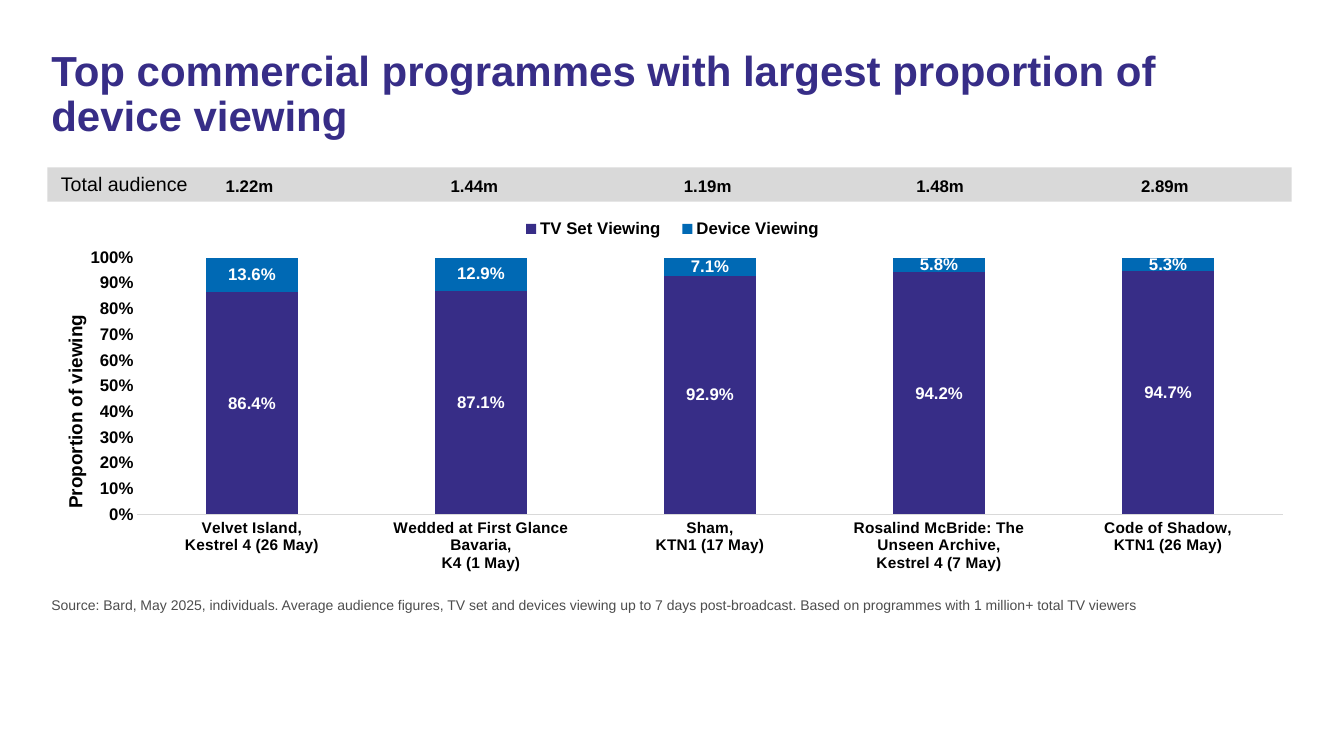
from typing import Any, NamedTuple

from lxml.etree import SubElement as Sub
from pptx import Presentation
from pptx.chart.data import CategoryChartData as Data
from pptx.dml.color import RGBColor
from pptx.enum.chart import XL_CHART_TYPE as Kind
from pptx.enum.chart import XL_LEGEND_POSITION as Side
from pptx.enum.chart import XL_TICK_MARK as Tick
from pptx.enum.shapes import MSO_SHAPE as Form
from pptx.enum.text import MSO_ANCHOR as Anchor
from pptx.enum.text import PP_ALIGN as Align
from pptx.oxml.ns import qn
from pptx.util import Inches, Pt

WIDE, HIGH = Inches(13.33), Inches(7.5)
NAVY, BLUE, GREY, DARK = "372D87", "0069B4", "D9D9D9", "4D4D4D"
BLACK, WHITE = "000000", "FFFFFF"


class Box(NamedTuple):
    left: float
    top: float
    width: float
    height: float

    def place(self) -> tuple[int, int, int, int]:
        col, row = WIDE / 100, HIGH / 100
        return (int(self.left * col), int(self.top * row),
                int(self.width * col), int(self.height * row))


class Note(NamedTuple):
    text: str
    box: Box
    size: float
    hue: str = BLACK
    bold: bool = False
    align: Any = Align.LEFT
    anchor: Any = Anchor.TOP
    line: float = 1.0


class Show(NamedTuple):
    name: str
    total: str
    mid: float
    share: float


class Part(NamedTuple):
    name: str
    hue: str
    vals: list[float]


SHOWS = [
    Show("Velvet Island,\nKestrel 4 (26 May)", "1.22m", 18.57, 0.864),
    Show("Wedded at First Glance Bavaria,\nK4 (1 May)", "1.44m", 35.3, 0.871),
    Show("Sham,\nKTN1 (17 May)", "1.19m", 52.66, 0.929),
    Show("Rosalind McBride: The Unseen Archive,\nKestrel 4 (7 May)",
         "1.48m", 69.95, 0.942),
    Show("Code of Shadow,\nKTN1 (26 May)", "2.89m", 86.68, 0.947),
]
PARTS = [
    Part("TV Set Viewing", NAVY, [s.share for s in SHOWS]),
    Part("Device Viewing", BLUE, [round(1 - s.share, 3) for s in SHOWS]),
]
BAND = Box(3.53, 22.13, 92.57, 4.53)
GRAPH = Box(3.53, 18.13, 93.02, 64)
CELL = 7.13
NOTES = [
    Note("Top commercial programmes with largest proportion of device viewing",
         Box(3.08, 5.2, 93.02, 14.93), 30, NAVY, True,
         anchor=Anchor.MIDDLE, line=0.9),
    Note("Total audience", Box(1.2, 22.13, 13.5, 4.53), 14, align=Align.RIGHT),
    Note("Source: Bard, May 2025, individuals. Average audience figures, "
         "TV set and devices viewing up to 7 days post-broadcast. "
         "Based on programmes with 1 million+ total TV viewers",
         Box(3.08, 78.27, 93.02, 4.4), 10, DARK),
] + [
    Note(s.total, Box(s.mid - CELL / 2, 22.53, CELL, 4), 12, bold=True,
         align=Align.CENTER)
    for s in SHOWS
]


def tint(hue: str) -> RGBColor:
    return RGBColor.from_string(hue)


def apply(item: Any, **form: Any) -> None:
    for key, val in form.items():
        setattr(item, key, val)


def style(font: Any, size: float, hue: str = BLACK, bold: bool = True) -> None:
    apply(font, name="Arial", size=Pt(size), bold=bold)
    font.color.rgb = tint(hue)


def paint(fill: Any, hue: str) -> None:
    fill.solid()
    fill.fore_color.rgb = tint(hue)


def write(slide: Any, note: Note) -> None:
    frame = slide.shapes.add_textbox(*note.box.place()).text_frame
    apply(frame, word_wrap=True, vertical_anchor=note.anchor)
    para = frame.paragraphs[0]
    apply(para, text=note.text, alignment=note.align, line_spacing=note.line)
    style(para.runs[0].font, note.size, note.hue, note.bold)


def pin(node: Any, after: str, **spots: Any) -> None:
    for old in node.findall(qn("c:layout")):
        node.remove(old)
    lay = Sub(node, qn("c:layout"))
    hold = Sub(lay, qn("c:manualLayout"))
    for tag, val in spots.items():
        Sub(hold, qn("c:" + tag)).set("val", str(val))
    prior = node.find(qn(after)) if after else None
    if prior is None:
        node.insert(0, lay)
    else:
        prior.addnext(lay)


def plot(slide: Any) -> None:
    data = Data(number_format="0.0%")
    data.categories = [s.name for s in SHOWS]
    for part in PARTS:
        data.add_series(part.name, part.vals)
    chart = slide.shapes.add_chart(
        Kind.COLUMN_STACKED_100, *GRAPH.place(), data).chart
    style(chart.font, 10, bold=False)
    apply(chart, has_title=False, has_legend=True)
    edge = {"xMode": "edge", "yMode": "edge"}

    key = chart.legend
    apply(key, position=Side.BOTTOM, include_in_layout=False)
    style(key.font, 12)
    pin(key._element, "c:legendPos", **edge, x=0.37, y=0.16, w=0.26, h=0.06)

    cat, val = chart.category_axis, chart.value_axis
    for axis, size in ((cat, 11), (val, 12)):
        apply(axis, major_tick_mark=Tick.NONE, minor_tick_mark=Tick.NONE,
              has_major_gridlines=False)
        style(axis.tick_labels.font, size)
    cat.format.line.color.rgb = tint(GREY)
    cat.format.line.width = Pt(0.75)
    val.format.line.fill.background()
    apply(val, minimum_scale=0, maximum_scale=1, major_unit=0.1)
    apply(val.tick_labels, number_format="0%", number_format_is_linked=False)
    head = val.axis_title
    head.text_frame.text = "Proportion of viewing"
    style(head.text_frame.paragraphs[0].runs[0].font, 13.5)
    pin(head._element, "c:tx", **edge, x=0.01, y=0.36)

    bars = chart.plots[0]
    apply(bars, gap_width=150, overlap=100, vary_by_categories=False)
    for run, part in zip(bars.series, PARTS):
        paint(run.format.fill, part.hue)
        tags = run.data_labels
        apply(tags, show_value=True, number_format="0.0%",
              number_format_is_linked=False)
        style(tags.font, 12, WHITE)
    area = chart._chartSpace.chart.plotArea
    pin(area, "", layoutTarget="inner", **edge,
        x=0.072, y=0.249, w=0.916, h=0.531)


def main() -> None:
    deck = Presentation()
    apply(deck, slide_width=WIDE, slide_height=HIGH)
    slide = deck.slides.add_slide(deck.slide_layouts[6])
    band = slide.shapes.add_shape(Form.RECTANGLE, *BAND.place())
    band.shadow.inherit = False
    paint(band.fill, GREY)
    band.line.fill.background()
    plot(slide)
    for note in NOTES:
        write(slide, note)
    deck.save("out.pptx")


if __name__ == "__main__":
    main()
